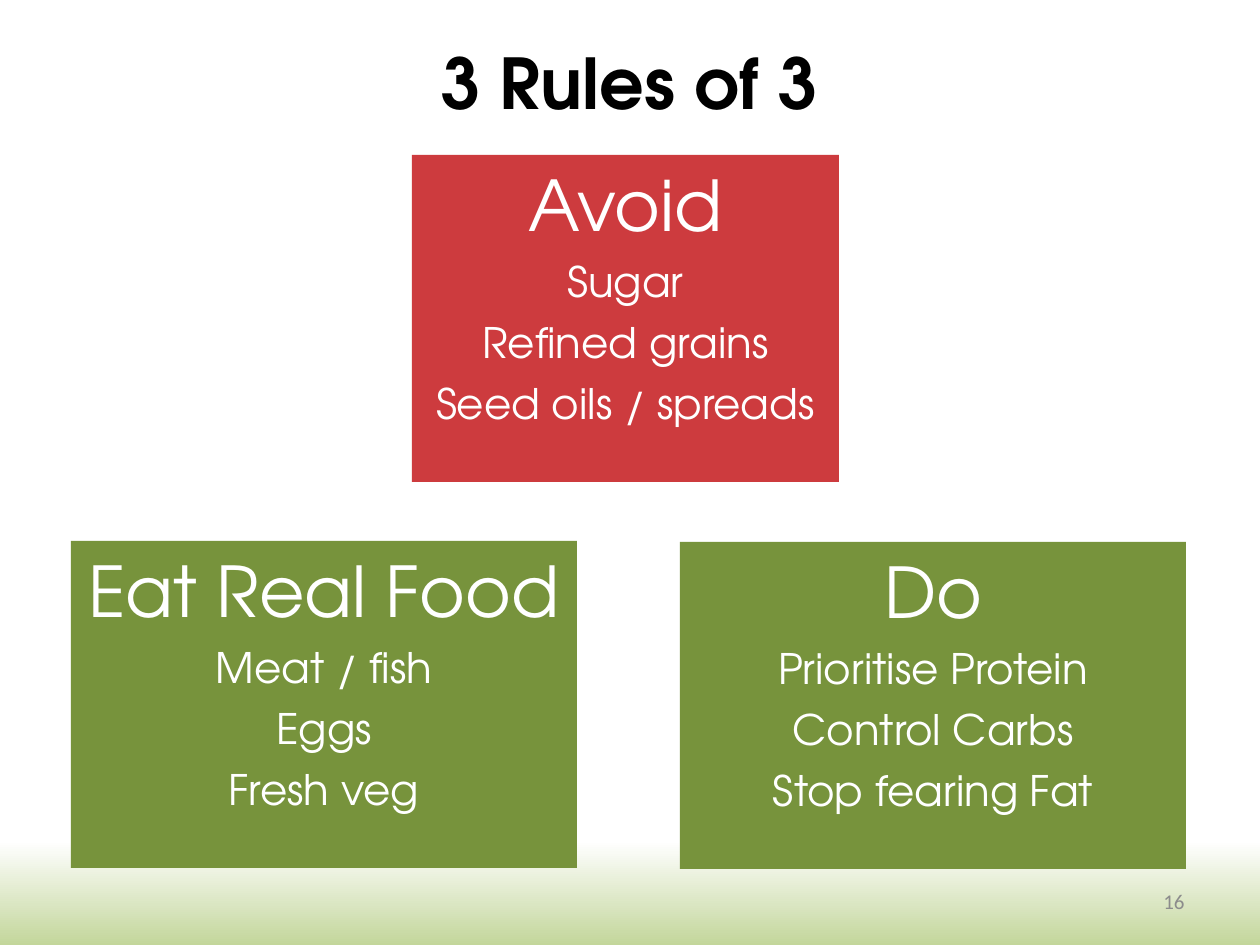
from dataclasses import dataclass

import pptx
import pptx.dml.color
import pptx.enum.shapes
import pptx.enum.text
import pptx.util

EMU_PER_PX = 914400 / 126
HEADING_FONT = "TeX Gyre Adventor"
ALIGN = pptx.enum.text.PP_ALIGN
ANCHOR = pptx.enum.text.MSO_ANCHOR


@dataclass(frozen=True)
class RuleCard:
    left: int
    top: int
    width: int
    fill: str
    heading: str
    rules: tuple[str, ...]


CARD_HEIGHT = 327
CARDS = (
    RuleCard(412, 155, 427, "CD3B3E", "Avoid",
             ("Sugar", "Refined grains", "Seed oils / spreads")),
    RuleCard(71, 541, 506, "77933C", "Eat Real Food",
             ("Meat / fish", "Eggs", "Fresh veg")),
    RuleCard(680, 542, 506, "77933C", "Do",
             ("Prioritise Protein", "Control Carbs", "Stop fearing Fat")),
)


def px(length: int) -> pptx.util.Emu:
    return pptx.util.Emu(round(length * EMU_PER_PX))


def color(value: str) -> pptx.dml.color.RGBColor:
    return pptx.dml.color.RGBColor.from_string(value)


def format_paragraph(paragraph, text: str, size: int, font: str, fill: str,
                     align=ALIGN.CENTER, bold: bool = False) -> None:
    paragraph.text = text
    paragraph.alignment = align
    paragraph.font.size = pptx.util.Pt(size)
    paragraph.font.name = font
    paragraph.font.bold = bold
    paragraph.font.color.rgb = color(fill)


def paint_background(slide) -> None:
    fill = slide.background.fill
    fill.gradient()
    fill.gradient_angle = 270
    for stop, (position, value) in zip(
        fill.gradient_stops, ((0.89, "FFFFFF"), (1.0, "C3D69B"))
    ):
        stop.position = position
        stop.color.rgb = color(value)


def write_title(slide, text: str) -> None:
    title = slide.shapes.title
    title.left, title.top, title.width, title.height = map(px, (84, 37, 1091, 89))
    frame = title.text_frame
    frame.auto_size = pptx.enum.text.MSO_AUTO_SIZE.NONE
    frame.vertical_anchor = ANCHOR.MIDDLE
    format_paragraph(frame.paragraphs[0], text, 40, HEADING_FONT, "000000", bold=True)


def write_slide_number(slide, text: str) -> None:
    frame = slide.shapes.add_textbox(*map(px, (903, 876, 294, 50))).text_frame
    frame.word_wrap = True
    frame.vertical_anchor = ANCHOR.MIDDLE
    format_paragraph(frame.paragraphs[0], text, 12, "Calibri", "8C8C8C", ALIGN.RIGHT)


def draw_card(slide, card: RuleCard) -> None:
    shape = slide.shapes.add_shape(
        pptx.enum.shapes.MSO_SHAPE.RECTANGLE,
        *map(px, (card.left, card.top, card.width, CARD_HEIGHT)),
    )
    shape.shadow.inherit = False
    shape.fill.solid()
    shape.fill.fore_color.rgb = color(card.fill)
    shape.line.fill.background()
    frame = shape.text_frame
    frame.word_wrap = True
    frame.vertical_anchor = ANCHOR.TOP
    for index, text in enumerate((card.heading, *card.rules)):
        paragraph = frame.add_paragraph() if index else frame.paragraphs[0]
        format_paragraph(paragraph, text, 24 if index else 40, HEADING_FONT, "FFFFFF")
        paragraph.space_after = pptx.util.Pt(6)


def main() -> None:
    presentation = pptx.Presentation()
    presentation.slide_width = px(1260)
    presentation.slide_height = px(945)
    slide = presentation.slides.add_slide(presentation.slide_layouts.get_by_name("Title Only"))
    paint_background(slide)
    write_title(slide, "3 Rules of 3")
    write_slide_number(slide, "16")
    for card in CARDS:
        draw_card(slide, card)
    presentation.save("out.pptx")


if __name__ == "__main__":
    main()
